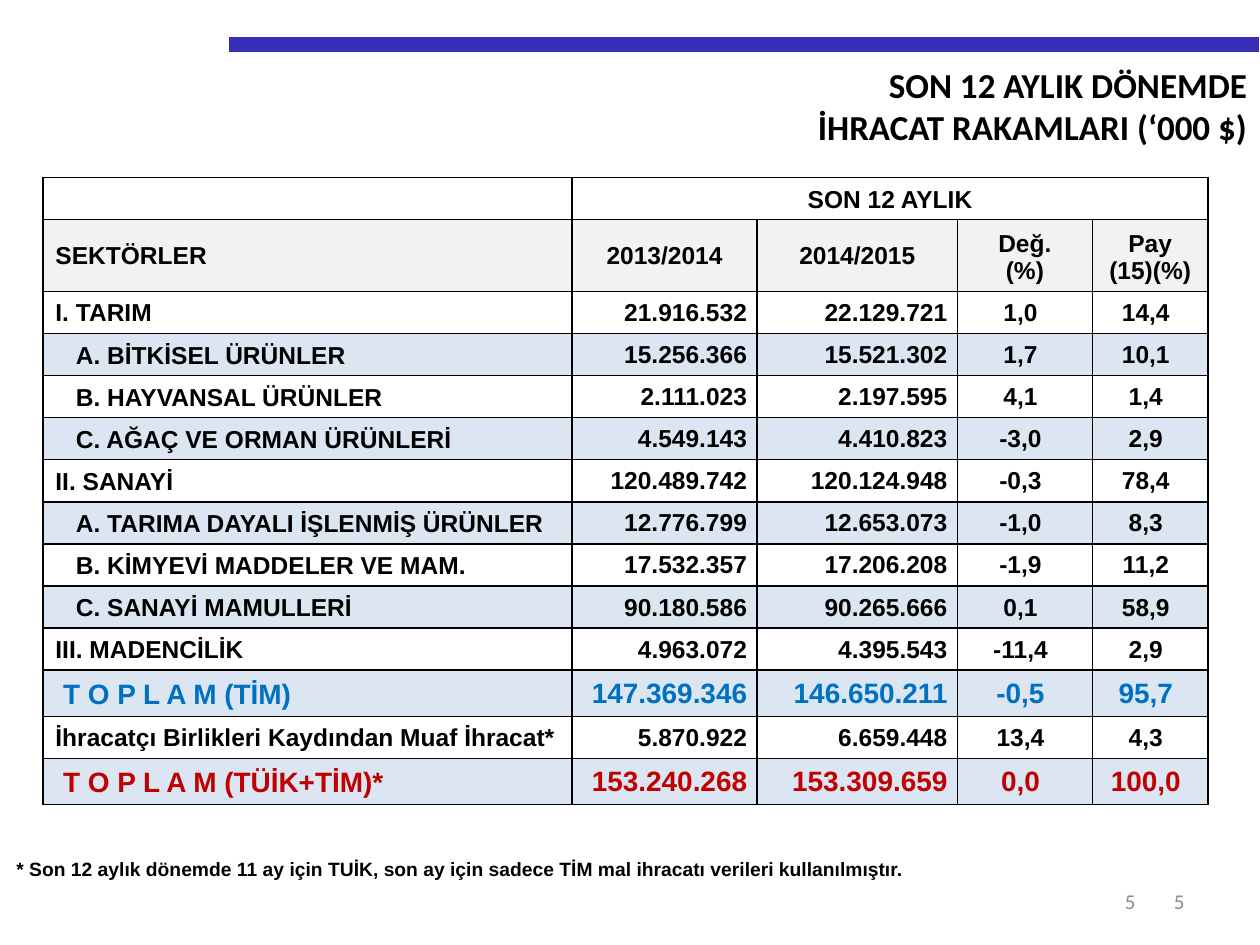
from dataclasses import dataclass
from typing import Optional

from lxml.etree import SubElement
from pptx import Presentation
from pptx.dml.color import RGBColor
from pptx.enum.shapes import MSO_CONNECTOR
from pptx.enum.text import MSO_ANCHOR, MSO_AUTO_SIZE, PP_ALIGN
from pptx.oxml import parse_xml
from pptx.oxml.ns import nsdecls, qn
from pptx.util import Pt


@dataclass(frozen=True)
class Theme:
    black: str = "000000"
    bar: str = "382EB8"
    header: str = "F2F2F2"
    band: str = "DCE6F2"
    tim: str = "0070C0"
    grand: str = "C00000"
    grey: str = "8C8C8C"
    heading: str = "Calibri"
    body: str = "Arial"
    title_size: float = 20
    cell_size: float = 14
    total_size: float = 16
    note_size: float = 11
    number_size: float = 12


T = Theme()


@dataclass(frozen=True)
class Style:
    size: float = T.cell_size
    color: str = T.black
    font: str = T.body
    bold: bool = True


@dataclass(frozen=True)
class CellFormat:
    align: PP_ALIGN = PP_ALIGN.LEFT
    anchor: MSO_ANCHOR = MSO_ANCHOR.MIDDLE
    margins: tuple[float, float, float, float] = (7.2, 3.6, 7.2, 3.6)
    fill: Optional[str] = None
    border: Optional[str] = T.black


@dataclass(frozen=True)
class Row:
    label: str
    values: tuple[str, str, str, str]
    indent: float = 0
    banded: bool = False
    style: Style = Style()
    height: float = 24.05


SUB = 11.67
TOTAL_INDENT = 4.45
TOTAL_HEIGHT = 26.4
VALUE_MARGINS = (0.72, 0.72, 5.76, 0)
COLUMNS = (302.4, 105.84, 114.48, 77.04, 66.24)
HEADINGS = ("SEKTÖRLER", "2013/2014", "2014/2015", "Değ.\n(%)", "Pay\n(15)(%)")
ROWS = (
    Row("I. TARIM", ("21.916.532", "22.129.721", "1,0", "14,4")),
    Row("A. BİTKİSEL ÜRÜNLER", ("15.256.366", "15.521.302", "1,7", "10,1"), SUB, True),
    Row("B. HAYVANSAL ÜRÜNLER", ("2.111.023", "2.197.595", "4,1", "1,4"), SUB),
    Row("C. AĞAÇ VE ORMAN ÜRÜNLERİ", ("4.549.143", "4.410.823", "-3,0", "2,9"), SUB, True),
    Row("II. SANAYİ", ("120.489.742", "120.124.948", "-0,3", "78,4")),
    Row("A. TARIMA DAYALI İŞLENMİŞ ÜRÜNLER", ("12.776.799", "12.653.073", "-1,0", "8,3"), SUB, True),
    Row("B. KİMYEVİ MADDELER VE MAM.", ("17.532.357", "17.206.208", "-1,9", "11,2"), SUB),
    Row("C. SANAYİ MAMULLERİ", ("90.180.586", "90.265.666", "0,1", "58,9"), SUB, True),
    Row("III. MADENCİLİK", ("4.963.072", "4.395.543", "-11,4", "2,9")),
    Row("T O P L A M (TİM)", ("147.369.346", "146.650.211", "-0,5", "95,7"),
        TOTAL_INDENT, True, Style(T.total_size, T.tim), TOTAL_HEIGHT),
    Row("İhracatçı Birlikleri Kaydından Muaf İhracat*", ("5.870.922", "6.659.448", "13,4", "4,3")),
    Row("T O P L A M (TÜİK+TİM)*", ("153.240.268", "153.309.659", "0,0", "100,0"),
        TOTAL_INDENT, True, Style(T.total_size, T.grand), TOTAL_HEIGHT),
)


def write(tf, text: str, style: Style, align: PP_ALIGN) -> None:
    """Write each line of text as a paragraph with one run."""
    for i, line in enumerate(text.split("\n")):
        p = tf.paragraphs[0] if i == 0 else tf.add_paragraph()
        p.alignment = align
        if not line:
            SubElement(p._p, qn("a:endParaRPr"), sz=str(int(style.size * 100)))
            continue
        r = p.add_run()
        r.text = line
        r.font.name = style.font
        r.font.size = Pt(style.size)
        r.font.bold = style.bold
        r.font.color.rgb = RGBColor.from_string(style.color)


def set_borders(cell, color: Optional[str]) -> None:
    """Give all four sides of a cell the same line, or none."""
    paint = f'<a:solidFill><a:srgbClr val="{color}"/></a:solidFill>' if color else "<a:noFill/>"
    tc_pr = cell._tc.get_or_add_tcPr()
    for i, side in enumerate(("lnL", "lnR", "lnT", "lnB")):
        tc_pr.insert(i, parse_xml(f'<a:{side} {nsdecls("a")} w="{Pt(1)}">{paint}</a:{side}>'))


def fill_cell(cell, text: str, fmt: CellFormat, style: Style = Style()) -> None:
    """Format one table cell and write its text."""
    cell.margin_left, cell.margin_top, cell.margin_right, cell.margin_bottom = map(Pt, fmt.margins)
    cell.vertical_anchor = fmt.anchor
    if fmt.fill:
        cell.fill.solid()
        cell.fill.fore_color.rgb = RGBColor.from_string(fmt.fill)
    else:
        cell.fill.background()
    set_borders(cell, fmt.border)
    write(cell.text_frame, text, style, fmt.align)


def add_grid(s, left: float, top: float, widths: tuple, heights: tuple):
    """Add a plain table with the given column widths and row heights."""
    tbl = s.shapes.add_table(len(heights), len(widths), Pt(left), Pt(top),
                             Pt(sum(widths)), Pt(sum(heights))).table
    tbl.first_row = tbl.horz_banding = False
    for col, width in zip(tbl.columns, widths):
        col.width = Pt(width)
    for row, height in zip(tbl.rows, heights):
        row.height = Pt(height)
    return tbl


def add_exports(s) -> None:
    """Add the table of exports by sector."""
    heights = (24.05, 41, *(row.height for row in ROWS))
    tbl = add_grid(s, 24.48, 101.52, COLUMNS, heights)
    tbl.cell(0, 1).merge(tbl.cell(0, 4))
    for j, heading in enumerate(HEADINGS):
        align = PP_ALIGN.CENTER if j else PP_ALIGN.LEFT
        fill_cell(tbl.cell(0, j), "SON 12 AYLIK" if j == 1 else "",
                  CellFormat(align, MSO_ANCHOR.BOTTOM))
        anchor = MSO_ANCHOR.BOTTOM if j > 2 else MSO_ANCHOR.MIDDLE
        fill_cell(tbl.cell(1, j), heading, CellFormat(align, anchor, fill=T.header))
    for i, row in enumerate(ROWS, 2):
        fill = T.band if row.banded else None
        label = CellFormat(anchor=MSO_ANCHOR.BOTTOM, margins=(7.2 + row.indent, 3.6, 7.2, 3.6), fill=fill)
        fill_cell(tbl.cell(i, 0), row.label, label, row.style)
        for j, value in enumerate(row.values, 1):
            align = PP_ALIGN.RIGHT if j < 3 else PP_ALIGN.CENTER
            fill_cell(tbl.cell(i, j), value, CellFormat(align, margins=VALUE_MARGINS, fill=fill), row.style)


def add_note(s) -> None:
    """Add the footnote table."""
    tbl = add_grid(s, 8.64, 485.28, (532.8,), (22.5, 22.5))
    note = ("* Son 12 aylık dönemde 11 ay için TUİK, son ay için sadece "
            "TİM mal ihracatı verileri kullanılmıştır.")
    for i, text in enumerate((note, "")):
        fill_cell(tbl.cell(i, 0), text, CellFormat(margins=(0.72, 0.72, 0.72, 0), border=None),
                  Style(T.note_size))


def add_number(s, left: float, width: float) -> None:
    """Add a right-aligned slide number."""
    tf = s.shapes.add_textbox(Pt(left), Pt(500.4), Pt(width), Pt(28.8)).text_frame
    tf.word_wrap = True
    tf.vertical_anchor = MSO_ANCHOR.MIDDLE
    write(tf, "5", Style(T.number_size, T.grey, T.heading, False), PP_ALIGN.RIGHT)


def add_bar(s) -> None:
    """Add the thick rule above the title."""
    ln = s.shapes.add_connector(MSO_CONNECTOR.STRAIGHT, Pt(131), Pt(25.2), Pt(719.3), Pt(25.2))
    ln.line.width = Pt(8.5)
    ln.line.color.rgb = RGBColor.from_string(T.bar)
    SubElement(ln._element.spPr, qn("a:effectLst"))


def add_title(s) -> None:
    """Move and format the title placeholder."""
    sp = s.shapes.title
    sp.left, sp.top, sp.width, sp.height = Pt(76.3), Pt(32.4), Pt(643.7), Pt(55.4)
    tf = sp.text_frame
    tf.auto_size = MSO_AUTO_SIZE.NONE
    tf.vertical_anchor = MSO_ANCHOR.TOP
    write(tf, "SON 12 AYLIK DÖNEMDE\nİHRACAT RAKAMLARI (‘000 $)",
          Style(T.title_size, font=T.heading), PP_ALIGN.RIGHT)


def main() -> None:
    """Build the slide and save it."""
    prs = Presentation()
    prs.slide_width, prs.slide_height = Pt(720), Pt(540)
    s = prs.slides.add_slide(prs.slide_layouts[5])
    add_number(s, 516.24, 167.76)
    add_bar(s)
    add_number(s, 504.72, 151.2)
    add_title(s)
    add_exports(s)
    add_note(s)
    prs.save("out.pptx")


if __name__ == "__main__":
    main()
